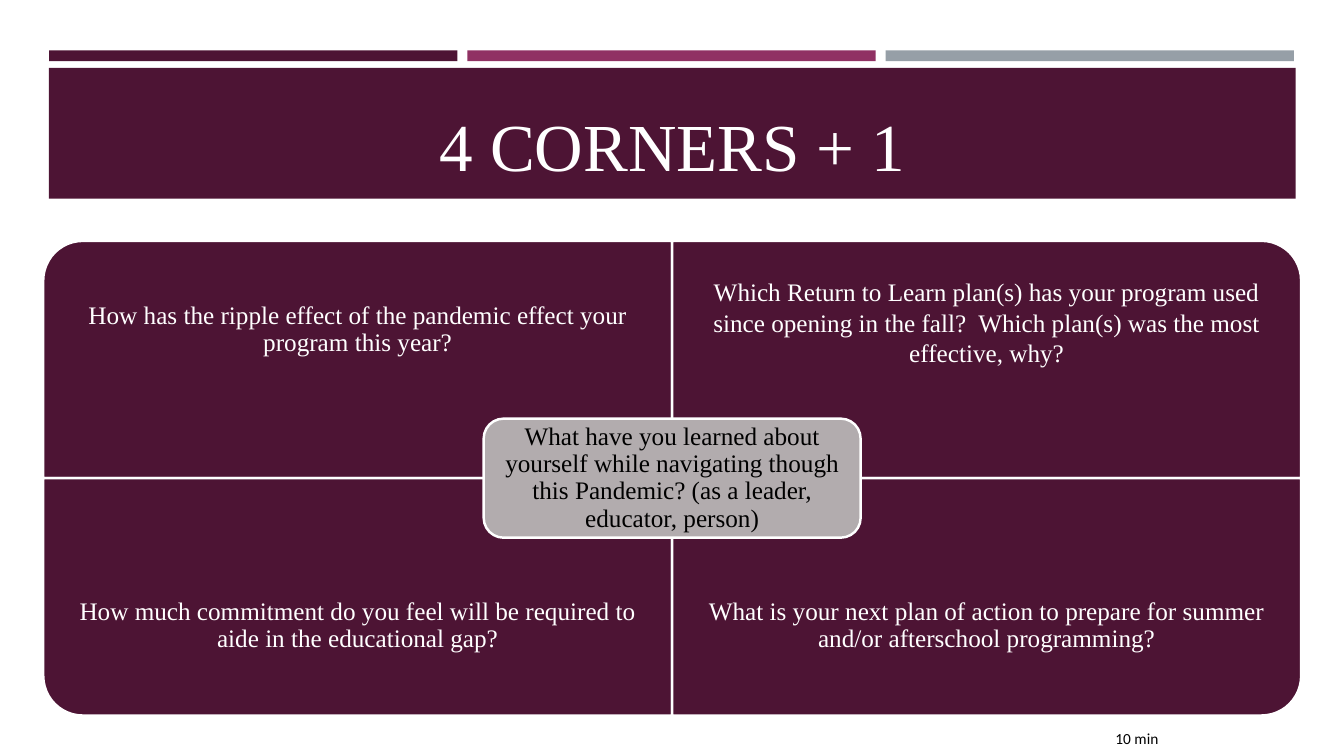
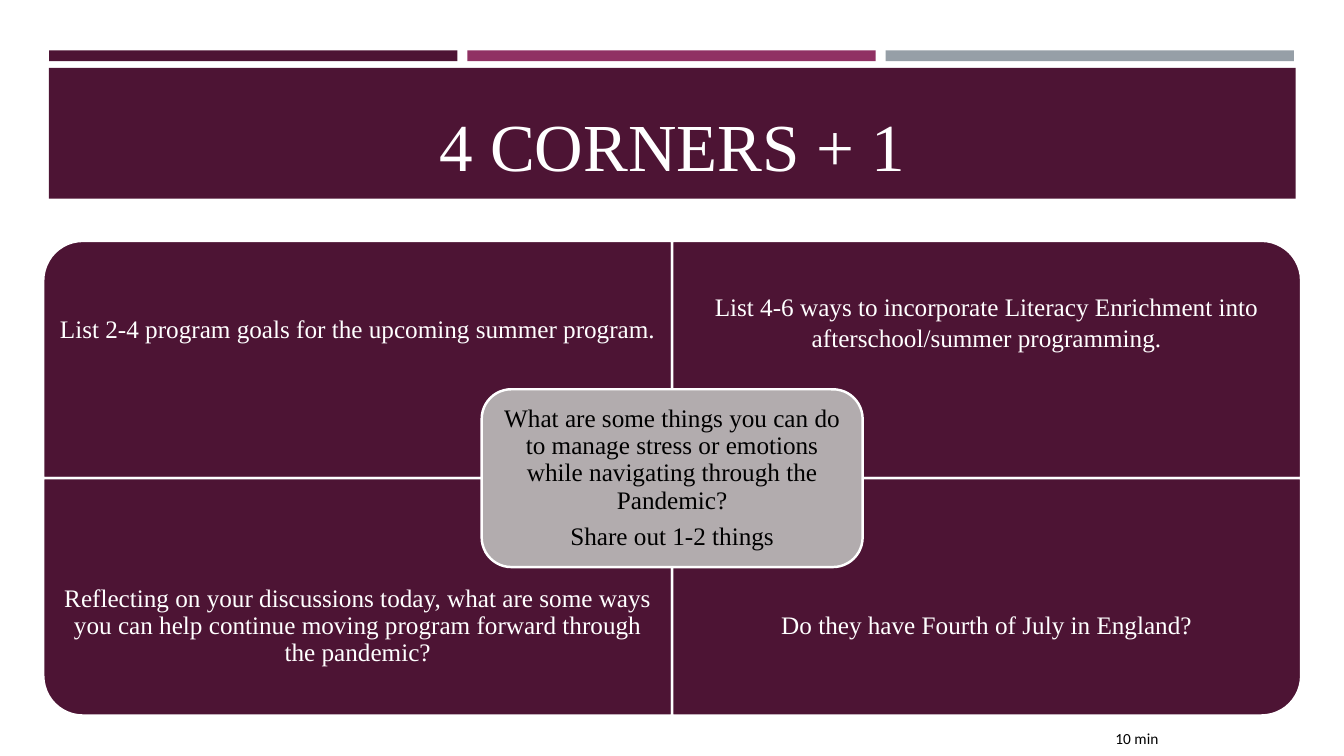
from pptx import Presentation
from pptx.dml.color import RGBColor
from pptx.enum import shapes, text
from pptx.util import Cm, Pt

PLUM, MAGENTA, STEEL, GREY = "4D1434", "903163", "969FA7", "B2ACAE"
WHITE, BLACK = "FFFFFF", "000000"
SERIF, SANS = "Times New Roman", "Calibri"
SHAPE = shapes.MSO_SHAPE
MIDDLE = text.MSO_ANCHOR.MIDDLE
CENTER = text.PP_ALIGN.CENTER

TITLE = "4 CORNERS + 1"
TIMING = "10 min"
SLIDES = [
    {
        "corners": [
            "How has the ripple effect of the pandemic effect your program this year?",
            "Which Return to Learn plan(s) has your program used since opening in the fall?  "
            "Which plan(s) was the most effective, why?",
            "How much commitment do you feel will be required to aide in the educational gap?",
            "What is your next plan of action to prepare for summer and/or afterschool programming?",
        ],
        "center": [
            "What have you learned about yourself while navigating though this Pandemic? "
            "(as a leader, educator, person)",
        ],
        "center_size": (9.5, 3),
    },
    {
        "corners": [
            "List 2-4 program goals for the upcoming summer program.",
            "List 4-6 ways to incorporate Literacy Enrichment into afterschool/summer programming.",
            "Reflecting on your discussions today, what are some ways you can help continue "
            "moving program forward through the pandemic?",
            "Do they have Fourth of July in England?",
        ],
        "center": [
            "What are some things you can do to manage stress or emotions while navigating "
            "through the Pandemic?",
            "Share out 1-2 things",
        ],
        "center_size": (9.6, 4.48),
    },
]

BAR_COLORS = [PLUM, MAGENTA, STEEL]
BAR_LEFT, BAR_TOP, BAR_WIDTH, BAR_HEIGHT, BAR_GAP = 1.24, 1.27, 10.29, 0.27, 0.25
GRID_LEFT, GRID_TOP, CELL_WIDTH, CELL_HEIGHT = 1.09, 6.07, 15.85, 5.98
CELL_TEXT_HEIGHT = 4.5
CORNER_ROTATIONS = [270, 0, 180, 90]


def color(value):
    return RGBColor.from_string(value)


def add_block(page, kind, left, top, width, height, fill, outlined=False):
    block = page.shapes.add_shape(kind, Cm(left), Cm(top), Cm(width), Cm(height))
    block.shadow.inherit = False
    block.fill.solid()
    block.fill.fore_color.rgb = color(fill)
    if outlined:
        block.line.color.rgb = color(WHITE)
        block.line.width = Pt(1.75)
    else:
        block.line.fill.background()
    return block


def write(box, lines, size, ink, font=SERIF, align=CENTER, anchor=MIDDLE,
          spacing=1, after=0, inset=None):
    frame = box.text_frame
    frame.text = "\n".join(lines)
    frame.word_wrap = True
    frame.vertical_anchor = anchor
    if inset is not None:
        frame.margin_left = frame.margin_right = Cm(inset)
        frame.margin_top = frame.margin_bottom = Cm(inset)
    for para in frame.paragraphs:
        para.alignment = align
        para.line_spacing = spacing
        para.space_after = Pt(after)
        for span in para.runs:
            span.font.name = font
            span.font.size = Pt(size)
            span.font.color.rgb = color(ink)


def add_text(page, left, top, width, height, lines, size, ink, **style):
    box = page.shapes.add_textbox(Cm(left), Cm(top), Cm(width), Cm(height))
    write(box, lines, size, ink, **style)
    return box


def add_frame(page):
    for index, fill in enumerate(BAR_COLORS):
        left = BAR_LEFT + index * (BAR_WIDTH + BAR_GAP)
        add_block(page, SHAPE.RECTANGLE, left, BAR_TOP, BAR_WIDTH, BAR_HEIGHT, fill)
    add_block(page, SHAPE.RECTANGLE, 1.23, 1.71, 31.42, 3.3, PLUM)
    add_text(page, 1.63, 1.96, 30.63, 2.82, [TITLE], 48, WHITE,
             anchor=text.MSO_ANCHOR.BOTTOM)
    add_text(page, 27.86, 18.26, 4.39, 0.74, [TIMING], 11, BLACK, font=SANS,
             align=text.PP_ALIGN.LEFT, anchor=text.MSO_ANCHOR.TOP)


def add_corner(page, index, question):
    row, column = divmod(index, 2)
    left = GRID_LEFT + column * CELL_WIDTH
    top = GRID_TOP + row * CELL_HEIGHT
    rotation = CORNER_ROTATIONS[index]
    width, height = CELL_WIDTH, CELL_HEIGHT
    if rotation in (90, 270):
        width, height = height, width
    block = add_block(page, SHAPE.ROUND_1_RECTANGLE,
                      left + (CELL_WIDTH - width) / 2, top + (CELL_HEIGHT - height) / 2,
                      width, height, PLUM, outlined=True)
    block.rotation = rotation
    text_top = top + row * (CELL_HEIGHT - CELL_TEXT_HEIGHT)
    top_right = index == 1
    box = add_text(page, left, text_top, CELL_WIDTH, CELL_TEXT_HEIGHT, [question], 18, WHITE,
                   spacing=1 if top_right else 0.9, inset=0.36)
    if top_right:
        box.text_frame.margin_bottom = Cm(0.77)


def add_center(page, lines, size):
    width, height = size
    block = add_block(page, SHAPE.ROUNDED_RECTANGLE,
                      GRID_LEFT + CELL_WIDTH - width / 2, GRID_TOP + CELL_HEIGHT - height / 2,
                      width, height, GREY, outlined=True)
    write(block, lines, 18, BLACK, spacing=0.9, after=6.3, inset=0.18)


def main():
    deck = Presentation()
    deck.slide_width, deck.slide_height = Cm(33.87), Cm(19.05)
    for content in SLIDES:
        page = deck.slides.add_slide(deck.slide_layouts[6])
        add_frame(page)
        for index, question in enumerate(content["corners"]):
            add_corner(page, index, question)
        add_center(page, content["center"], content["center_size"])
    deck.save("out.pptx")


if __name__ == "__main__":
    main()
